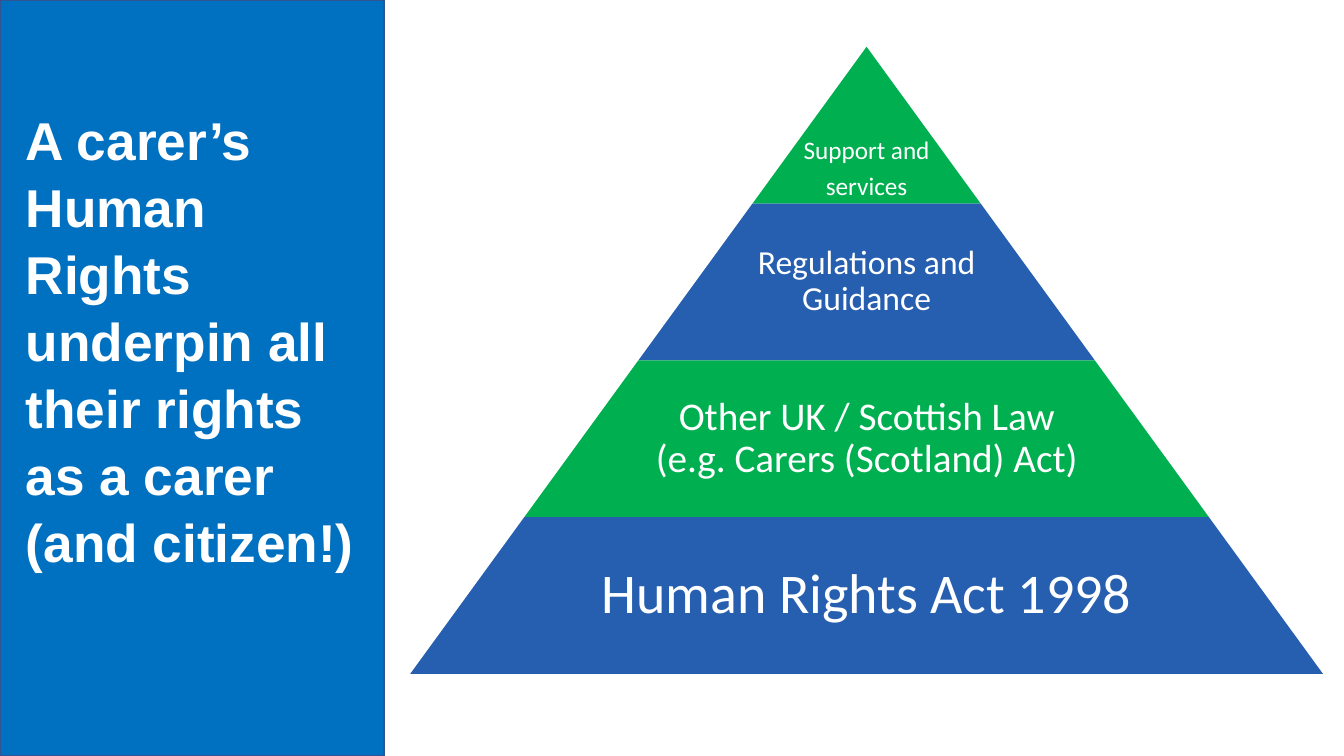
"""Build a slide showing the pyramid of rights that support a carer."""
from pptx import Presentation
from pptx.dml.color import RGBColor
from pptx.enum.shapes import MSO_SHAPE as Preset
from pptx.enum.text import MSO_ANCHOR as Anchor, PP_ALIGN as Align
from pptx.util import Cm, Pt

COLOURS = {"panel": "0070C0", "border": "325491", "green": "00B050",
           "blue": "275FB0", "white": "FFFFFF"}
PAGE_WIDTH, PAGE_HEIGHT = 33.87, 19.05
PANEL_WIDTH = 9.68
APEX_X, APEX_Y = 21.84, 1.18
TIER_HEIGHT, TIER_STEP = 3.95, 5.75
TIERS = [
    (["Support and", "services"], "green", 18, 1, Anchor.BOTTOM),
    (["Regulations and Guidance"], "blue", 24, 0.65, Anchor.MIDDLE),
    (["Other UK / Scottish Law (e.g. Carers (Scotland) Act)"],
     "green", 28, 0.65, Anchor.MIDDLE),
    (["Human Rights Act 1998"], "blue", 40, 0.65, Anchor.MIDDLE),
]
HEADING = ["A carer’s Human Rights underpin all their rights as a carer",
           "(and citizen!)"]


def colour(name):
    return RGBColor.from_string(COLOURS[name])


def add_block(page, preset, left, top, width, height, fill, border=None):
    block = page.shapes.add_shape(preset, Cm(left), Cm(top), Cm(width), Cm(height))
    block.shadow.inherit = False
    block.fill.solid()
    block.fill.fore_color.rgb = colour(fill)
    if border:
        block.line.color.rgb = colour(border)
        block.line.width = Pt(1)
    else:
        block.line.fill.background()
    return block


def add_text(page, lines, left, top, width, height, *, font, size, bold=False,
             align=Align.LEFT, anchor=Anchor.TOP, spacing=1.0, after=0, inset=None):
    box = page.shapes.add_textbox(Cm(left), Cm(top), Cm(width), Cm(height))
    frame = box.text_frame
    frame.word_wrap = True
    frame.vertical_anchor = anchor
    if inset is not None:
        frame.margin_left = frame.margin_right = Cm(inset)
        frame.margin_top = frame.margin_bottom = Cm(inset)
    for index, line in enumerate(lines):
        para = frame.add_paragraph() if index else frame.paragraphs[0]
        para.alignment = align
        para.line_spacing = spacing
        para.space_after = Pt(after)
        span = para.add_run()
        span.text = line
        span.font.name = font
        span.font.size = Pt(size)
        span.font.bold = bold
        span.font.color.rgb = colour("white")


def add_tier(page, level, lines, fill, size, text_share, anchor):
    width = TIER_STEP * (level + 1)
    top = APEX_Y + TIER_HEIGHT * level
    tier = add_block(page, Preset.TRAPEZOID, APEX_X - width / 2, top,
                     width, TIER_HEIGHT, fill)
    tier.adjustments[0] = TIER_STEP / 2 / TIER_HEIGHT
    text_width = width * text_share
    add_text(page, lines, APEX_X - text_width / 2, top, text_width, TIER_HEIGHT,
             font="Calibri", size=size, align=Align.CENTER, anchor=anchor,
             spacing=0.9, after=size * 0.35, inset=size * 0.0035)


def main():
    deck = Presentation()
    deck.slide_width, deck.slide_height = Cm(PAGE_WIDTH), Cm(PAGE_HEIGHT)
    page = deck.slides.add_slide(deck.slide_layouts[6])
    add_block(page, Preset.RECTANGLE, 0, 0, PANEL_WIDTH, PAGE_HEIGHT,
              "panel", border="border")
    add_text(page, HEADING, 0.4, 2.5, 9.07, 11.63, font="Arial", size=38,
             bold=True, spacing=1.05)
    for level, tier in enumerate(TIERS):
        add_tier(page, level, *tier)
    deck.save("out.pptx")


if __name__ == "__main__":
    main()
